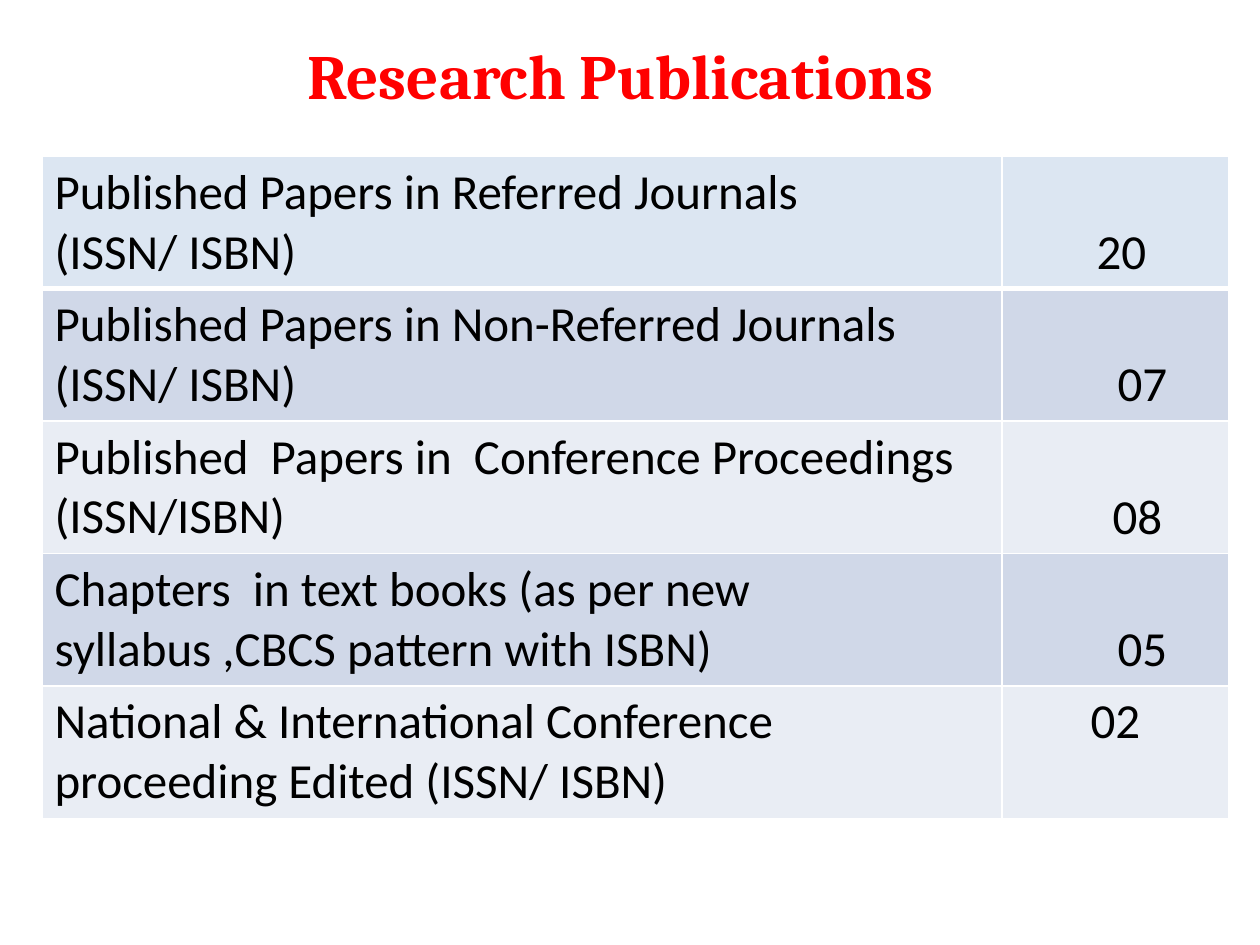
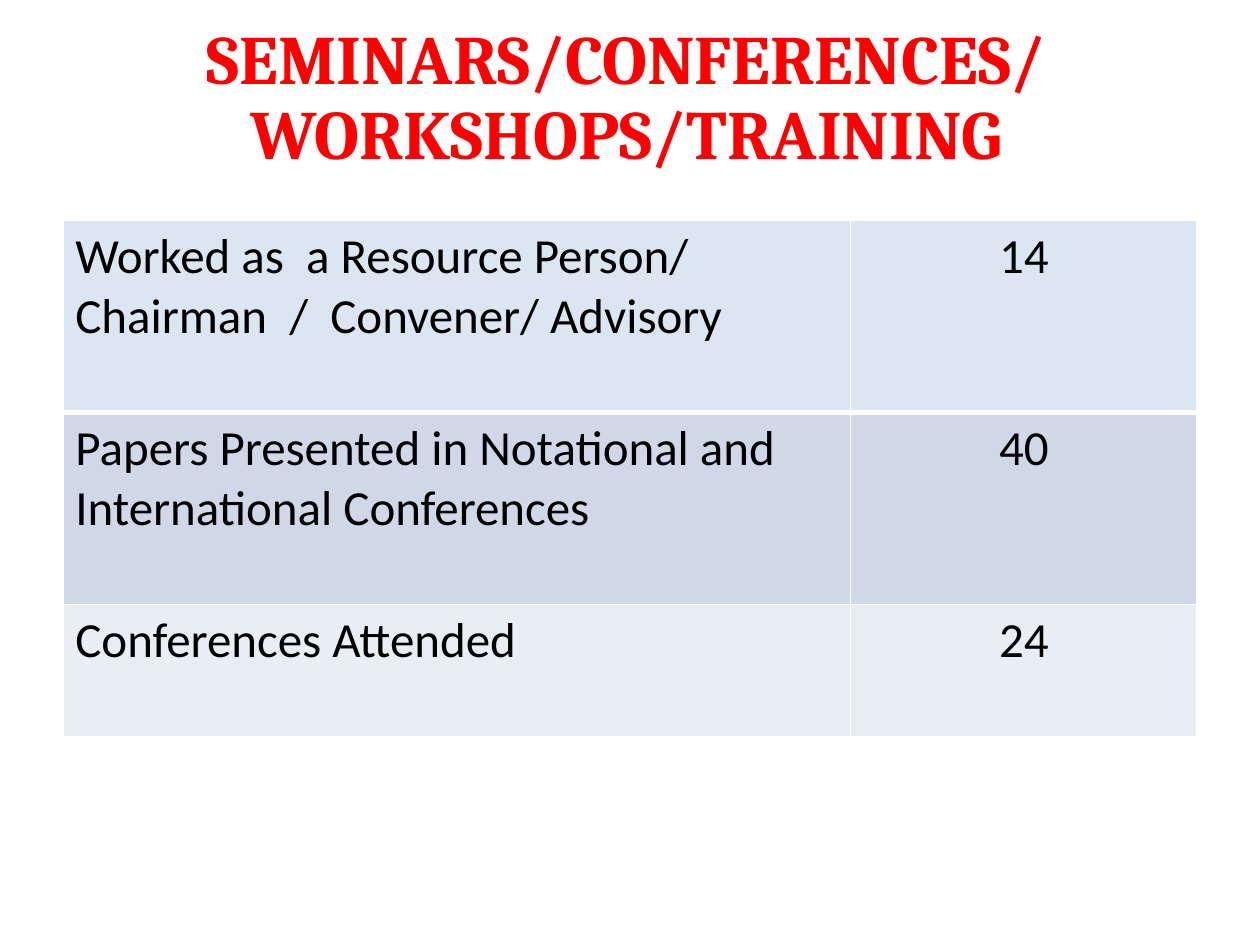
from lxml import etree
from pptx import Presentation
from pptx.dml.color import RGBColor
from pptx.enum import text
from pptx.oxml import ns
from pptx.util import Cm, Pt

WHITE, BLACK, RED = "FFFFFF", "000000", "FF0000"
FIRST_FILL = "DCE6F2"
BAND_FILLS = ("D0D8E8", "E9EDF4")
TITLE_FORMAT = {"name": "Cambria", "bold": True}
CELL_FORMAT = {"name": "Calibri", "size": Pt(28), "bold": False}
CELL_MARGIN = 0.25
TOP, BOTTOM = text.MSO_ANCHOR.TOP, text.MSO_ANCHOR.BOTTOM

# Label, count, anchor of the count, indent of the count in cm
PUBLICATIONS = [
    ("Published Papers in Referred Journals\n(ISSN/ ISBN)", "20", BOTTOM, 0.24),
    ("Published Papers in Non-Referred Journals (ISSN/ ISBN)", "07", BOTTOM, 1.09),
    ("Published  Papers in  Conference Proceedings (ISSN/ISBN)", "08", BOTTOM, 0.89),
    ("Chapters  in text books (as per new syllabus ,CBCS pattern with ISBN)",
     "05", BOTTOM, 1.09),
    ("National & International Conference proceeding Edited (ISSN/ ISBN)",
     "02", TOP, 0),
]
EVENTS = [
    ("Worked as  a Resource Person/  Chairman  /  Convener/ Advisory", "14", TOP, 0),
    ("Papers Presented in Notational and International Conferences", "40", TOP, 0),
    ("Conferences Attended", "24", TOP, 0),
]


def color(hex_string):
    return RGBColor.from_string(hex_string)


def apply(target, values):
    for name, value in values.items():
        setattr(target, name, value)


def style_para(para, font_format, hex_string, align):
    para.alignment = align
    for span in para.runs:
        apply(span.font, font_format)
        span.font.color.rgb = color(hex_string)


def add_title(page, words, left, top, height, size, spacing=1.0):
    box = page.shapes.add_textbox(Cm(left), Cm(top), Cm(22.86), Cm(height))
    frame = box.text_frame
    apply(frame, {"word_wrap": True, "vertical_anchor": text.MSO_ANCHOR.MIDDLE})
    frame.text = words
    para = frame.paragraphs[0]
    para.line_spacing = spacing
    style_para(para, {**TITLE_FORMAT, "size": Pt(size)}, RED, text.PP_ALIGN.CENTER)


def add_borders(cell, top_width, bottom_width):
    properties = cell._tc.get_or_add_tcPr()
    widths = {"lnL": 1, "lnR": 1, "lnT": top_width, "lnB": bottom_width}
    for side, width in widths.items():
        line = etree.SubElement(properties, ns.qn(f"a:{side}"), w=str(Pt(width)))
        fill = etree.SubElement(line, ns.qn("a:solidFill"))
        etree.SubElement(fill, ns.qn("a:srgbClr"), val=WHITE)


def fill_cell(cell, words, fill, align, anchor=TOP, indent=0):
    cell.text = words
    cell.fill.solid()
    cell.fill.fore_color.rgb = color(fill)
    apply(cell, {"vertical_anchor": anchor,
                 "margin_left": Cm(CELL_MARGIN + indent),
                 "margin_right": Cm(CELL_MARGIN)})
    for para in cell.text_frame.paragraphs:
        style_para(para, CELL_FORMAT, BLACK, align)


def add_count_table(page, records, left, top, widths, heights):
    """Add rows of label and count, with a thick rule below the first row."""
    frame = page.shapes.add_table(len(records), 2, Cm(left), Cm(top),
                                  Cm(sum(widths)), Cm(sum(heights)))
    table = frame.table
    apply(table, {"first_row": False, "horz_banding": False})
    for column, width in zip(table.columns, widths):
        column.width = Cm(width)
    for index, (label, count, anchor, indent) in enumerate(records):
        table.rows[index].height = Cm(heights[index])
        fill = BAND_FILLS[(index - 1) % 2] if index else FIRST_FILL
        label_cell, count_cell = table.rows[index].cells
        for cell in (label_cell, count_cell):
            add_borders(cell, 3 if index == 1 else 1, 3 if index == 0 else 1)
        fill_cell(label_cell, label, fill, text.PP_ALIGN.LEFT)
        fill_cell(count_cell, count, fill, text.PP_ALIGN.CENTER, anchor, indent)


def add_page(deck):
    page = deck.slides.add_slide(deck.slide_layouts[6])
    page.background.fill.solid()
    page.background.fill.fore_color.rgb = color(WHITE)
    return page


def main():
    deck = Presentation()
    apply(deck, {"slide_width": Cm(25.4), "slide_height": Cm(19.05)})

    page = add_page(deck)
    add_title(page, "Research Publications", 1.08, 0.13, 2.74, 36)
    add_count_table(page, PUBLICATIONS, 0.85, 3.15, (19.35, 4.57), [2.67] * 5)

    page = add_page(deck)
    add_title(page, "SEMINARS/CONFERENCES/WORKSHOPS/TRAINING",
              1.2, 0.1, 3.8, 39.6, 0.9)
    add_count_table(page, EVENTS, 1.27, 4.45, (15.88, 6.98), (3.87, 3.87, 2.67))

    deck.save("out.pptx")


if __name__ == "__main__":
    main()
